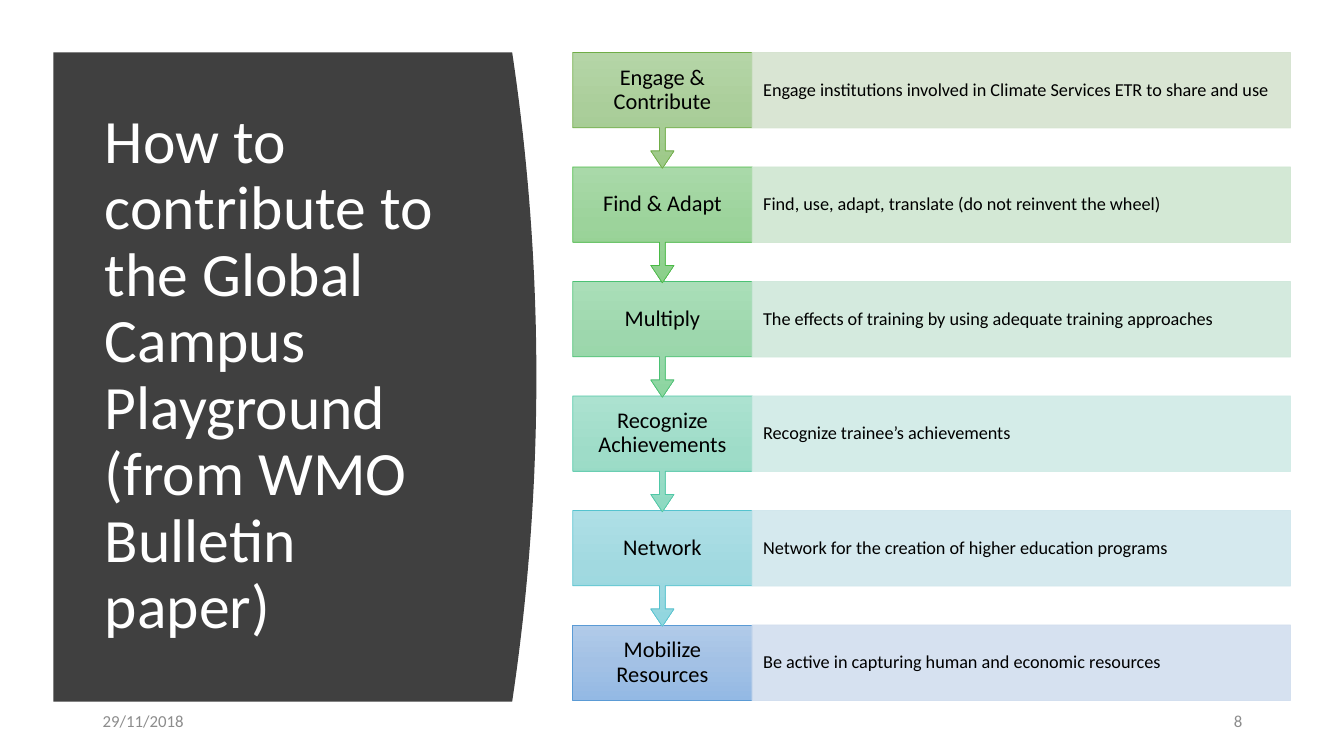
from dataclasses import dataclass

from lxml import etree
from pptx import Presentation
from pptx.dml.color import RGBColor
from pptx.enum.shapes import MSO_SHAPE as Preset
from pptx.enum.text import MSO_ANCHOR as Anchor, MSO_AUTO_SIZE as AutoSize, PP_ALIGN as Align
from pptx.oxml.ns import qn
from pptx.util import Inches, Pt


@dataclass(frozen=True)
class Theme:
    font: str = "Calibri"
    panel: str = "404040"
    title: str = "FFFFFF"
    body: str = "000000"
    footer: str = "8C8C8C"
    title_size: int = 44
    step_size: int = 16
    detail_size: int = 13
    footer_size: int = 12
    outline: float = 0.5


theme = Theme()


def write(shape, text, size, color, align=Align.LEFT, inset=(0.1, 0.05), spacing=None):
    frame = shape.text_frame
    frame.auto_size = AutoSize.NONE
    frame.word_wrap = True
    frame.vertical_anchor = Anchor.MIDDLE
    frame.margin_left = frame.margin_right = Inches(inset[0])
    frame.margin_top = frame.margin_bottom = Inches(inset[1])
    paragraph = frame.paragraphs[0]
    paragraph.alignment = align
    paragraph.line_spacing = spacing
    for index, line in enumerate(text.split("\n")):
        if index:
            paragraph.add_line_break()
        run = paragraph.add_run()
        run.text = line
        run.font.name = theme.font
        run.font.size = Pt(size)
        run.font.color.rgb = RGBColor.from_string(color)


def paint(shape, fill_color, line_color):
    shape.shadow.inherit = False
    shape.fill.solid()
    shape.fill.fore_color.rgb = RGBColor.from_string(fill_color)
    shape.line.color.rgb = RGBColor.from_string(line_color)
    shape.line.width = Pt(theme.outline)


deck = Presentation()
deck.slide_width, deck.slide_height = Inches(13.33), Inches(7.5)
slide = deck.slides.add_slide(deck.slide_layouts[5])
shapes = slide.shapes

# Title
title = shapes.title
title.left, title.top = Inches(0.94), Inches(1.11)
title.width, title.height = Inches(3.83), Inches(5.24)
write(title, "How to contribute to the Global Campus Playground\n(from WMO Bulletin paper)",
      theme.title_size, theme.title, spacing=0.9)

# Dark panel with a bulging right edge, behind the title
panel_left, panel_top, panel_bottom = 0.53, 0.52, 6.96
panel_corner, bulge, segments = 5.08, 0.24, 40
outline = shapes.build_freeform(Inches(panel_left), Inches(panel_top))
edge = []
for i in range(segments + 1):
    t = i / segments
    edge.append((Inches(panel_corner + bulge * 4 * t * (1 - t)),
                 Inches(panel_top + (panel_bottom - panel_top) * t)))
outline.add_line_segments(edge + [(Inches(panel_left), Inches(panel_bottom))], close=True)
panel = outline.convert_to_shape()
paint(panel, theme.panel, theme.panel)
panel.line.fill.background()
title.element.addprevious(panel.element)

# Steps: label, detail, gradient stops, outline, bar colour
steps = [
    ("Engage & Contribute",
     "Engage institutions involved in Climate Services ETR to share and use",
     ("B5D5A7", "AACE9A", "9CC987"), "70AD47", "D5E3CF"),
    ("Find & Adapt",
     "Find, use, adapt, translate (do not reinvent the wheel)",
     ("A9D9A9", "9CD39B", "8ACF89"), "4ABA46", "CFE6D1"),
    ("Multiply",
     "The effects of training by using adequate training approaches",
     ("AADEB8", "9DD7AD", "8BD59F"), "4BC174", "D0E8DB"),
    ("Recognize Achievements",
     "Recognize trainee’s achievements",
     ("ACE2D0", "9EDCC8", "8DDAC1"), "50C8A7", "D0EBE6"),
    ("Network",
     "Network for the creation of higher education programs",
     ("AEDFE6", "A1D9E0", "90D6DF"), "55C3CF", "D1E7ED"),
    ("Mobilize Resources",
     "Be active in capturing human and economic resources",
     ("B1CBE9", "A3C1E5", "93B9E4"), "5B9BD5", "D2DEEF"),
]
step_left, step_width, detail_width = 5.68, 1.78, 5.34
first_top, last_top, row_height, callout_height = 0.52, 6.2, 0.75, 1.15
pitch = (last_top - first_top) / (len(steps) - 1)

# Built from the bottom up so that each arrow tip lies over the next box
for row, (label, detail, stops, line_color, bar_color) in reversed(list(enumerate(steps))):
    top = Inches(first_top + row * pitch)
    is_last = row == len(steps) - 1
    step = shapes.add_shape(Preset.RECTANGLE if is_last else Preset.DOWN_ARROW_CALLOUT,
                            Inches(step_left), top, Inches(step_width),
                            Inches(row_height if is_last else callout_height))
    if not is_last:
        for index, value in enumerate((0.05, 0.1, 0.15, 0.65)):
            step.adjustments[index] = value
    paint(step, stops[0], line_color)

    # Three-stop gradient from top to bottom
    step.fill.gradient()
    step.fill.gradient_angle = 270
    stop_list = step.element.spPr.find(qn("a:gradFill")).find(qn("a:gsLst"))
    for stop in list(stop_list):
        stop_list.remove(stop)
    for position, color in zip((0, 50000, 100000), stops):
        stop = etree.SubElement(stop_list, qn("a:gs"), pos=str(position))
        etree.SubElement(stop, qn("a:srgbClr"), val=color)
    write(step, label, theme.step_size, theme.body, Align.CENTER, (0.13, 0.12), 0.9)

    # Detail bar, 90 % opaque
    bar = shapes.add_shape(Preset.RECTANGLE, Inches(step_left + step_width), top,
                           Inches(detail_width), Inches(row_height))
    paint(bar, bar_color, bar_color)
    for color in bar.element.spPr.iter(qn("a:srgbClr")):
        etree.SubElement(color, qn("a:alpha"), val="90000")
    write(bar, detail, theme.detail_size, theme.body, inset=(0.11, 0.18), spacing=0.9)

# Footer: date and page number
for left, text, align in ((0.92, "29/11/2018", Align.LEFT), (9.42, "8", Align.RIGHT)):
    footer = shapes.add_textbox(Inches(left), Inches(6.95), Inches(3), Inches(0.4))
    write(footer, text, theme.footer_size, theme.footer, align)

deck.save("out.pptx")
